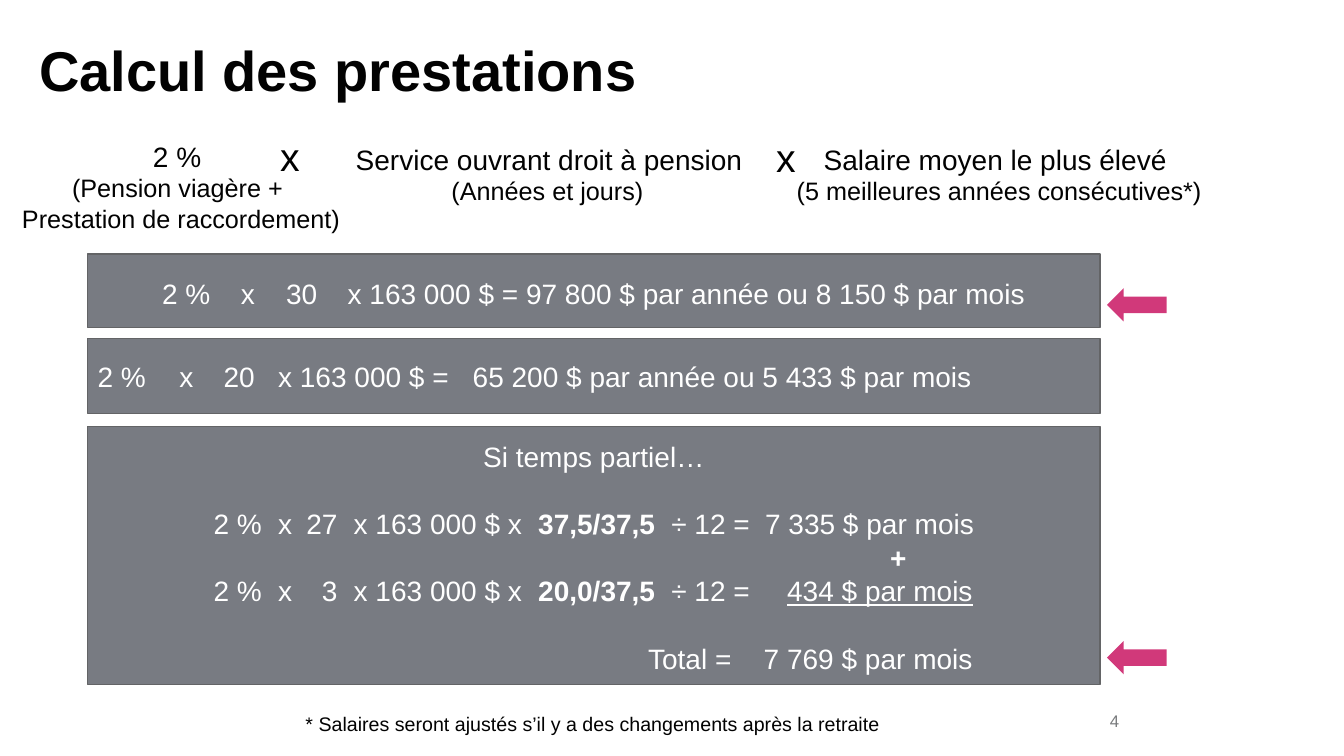
"""Build the slide that explains how pension benefits are calculated."""
from dataclasses import dataclass

import pptx
import pptx.dml.color
import pptx.enum.shapes
import pptx.enum.text
import pptx.oxml.ns
import pptx.slide
import pptx.text.text
import pptx.util
from lxml import etree

Inches = pptx.util.Inches
Pt = pptx.util.Pt
Align = pptx.enum.text.PP_ALIGN
Anchor = pptx.enum.text.MSO_ANCHOR
Shape = pptx.enum.shapes.MSO_SHAPE
qn = pptx.oxml.ns.qn


@dataclass(frozen=True)
class Theme:
    """Colours, font and type sizes of the slide."""
    font: str = "Arial"
    ink: str = "020202"
    black: str = "000000"
    white: str = "FFFFFF"
    band: str = "4B4F59"
    band_line: str = "636466"
    band_opacity: int = 75
    arrow: str = "D1397A"
    number: str = "797B7D"
    title_size: int = 40
    operator_size: int = 28
    body_size: int = 20
    detail_size: int = 18
    note_size: int = 14
    number_size: int = 12


THEME = Theme()


@dataclass(frozen=True)
class Box:
    """Left, top, width and height in inches."""
    left: float
    top: float
    width: float
    height: float

    def lengths(self) -> tuple[int, int, int, int]:
        """Return the four lengths for a shape."""
        return Inches(self.left), Inches(self.top), Inches(self.width), Inches(self.height)


@dataclass(frozen=True)
class Piece:
    """A stretch of text with one format."""
    text: str
    bold: bool = False
    underline: bool = False


@dataclass(frozen=True)
class Line:
    """One paragraph, with tab stops as (inches, alignment) pairs."""
    pieces: tuple[Piece, ...]
    size: int = THEME.body_size
    align: Align = Align.CENTER
    tabs: tuple[tuple[float, str], ...] = ()
    before: int = 0
    pitch: float | None = None


@dataclass(frozen=True)
class Block:
    """A text box and its paragraphs."""
    box: Box
    lines: tuple[Line, ...]
    color: str = THEME.ink
    margins: bool = True
    anchor: Anchor = Anchor.TOP


def plain(text: str, size: int = THEME.body_size, align: Align = Align.CENTER) -> Line:
    """Return a line in one format."""
    return Line((Piece(text),), size, align)


def left_tabs(*stops: float) -> tuple[tuple[float, str], ...]:
    """Return left-aligned tab stops."""
    return tuple((stop, "l") for stop in stops)


def part_time(*pieces: Piece, tabs: tuple[tuple[float, str], ...] = (),
              before: int = 0, align: Align = Align.LEFT) -> Line:
    """Return a line of the part-time example."""
    return Line(pieces, align=align, tabs=tabs, before=before, pitch=24)


def write_line(paragraph: pptx.text.text._Paragraph, line: Line, color: str) -> None:
    """Write one line into a paragraph."""
    if line.tabs:
        tab_list = etree.SubElement(paragraph._p.get_or_add_pPr(), qn("a:tabLst"))
        for stop, kind in line.tabs:
            etree.SubElement(tab_list, qn("a:tab"), pos=str(Inches(stop)), algn=kind)
    paragraph.alignment = line.align
    if line.before:
        paragraph.space_before = Pt(line.before)
    if line.pitch:
        paragraph.line_spacing = Pt(line.pitch)
    for piece in line.pieces:
        run = paragraph.add_run()
        run.text = piece.text
        run.font.name = THEME.font
        run.font.size = Pt(line.size)
        run.font.bold = piece.bold
        run.font.underline = piece.underline
        run.font.color.rgb = pptx.dml.color.RGBColor.from_string(color)


def draw_block(slide: pptx.slide.Slide, block: Block) -> None:
    """Draw a text box."""
    frame = slide.shapes.add_textbox(*block.box.lengths()).text_frame
    frame.word_wrap = True
    frame.vertical_anchor = block.anchor
    if not block.margins:
        frame.margin_left = frame.margin_right = frame.margin_top = frame.margin_bottom = 0
    for index, line in enumerate(block.lines):
        paragraph = frame.add_paragraph() if index else frame.paragraphs[0]
        write_line(paragraph, line, block.color)


def draw_band(slide: pptx.slide.Slide, box: Box) -> None:
    """Draw a translucent grey band."""
    band = slide.shapes.add_shape(Shape.RECTANGLE, *box.lengths())
    band.shadow.inherit = False
    band.fill.solid()
    band.fill.fore_color.rgb = pptx.dml.color.RGBColor.from_string(THEME.band)
    color = band.fill._xPr.find(qn("a:solidFill"))[0]
    etree.SubElement(color, qn("a:alpha"), val=str(THEME.band_opacity * 1000))
    band.line.color.rgb = pptx.dml.color.RGBColor.from_string(THEME.band_line)
    band.line.width = Pt(1)


def draw_arrow(slide: pptx.slide.Slide, box: Box) -> None:
    """Draw an arrow that points at a result."""
    arrow = slide.shapes.add_shape(Shape.LEFT_ARROW, *box.lengths())
    arrow.shadow.inherit = False
    arrow.fill.solid()
    arrow.fill.fore_color.rgb = pptx.dml.color.RGBColor.from_string(THEME.arrow)
    arrow.line.fill.background()


BAND_LEFT, BAND_WIDTH = 0.87, 10.04
BANDS = [Box(BAND_LEFT, top, BAND_WIDTH, height)
         for top, height in ((2.52, 0.73), (3.36, 0.74), (4.23, 2.56))]
ARROWS = [Box(10.98, top, 0.59, 0.33) for top in (2.86, 6.36)]

FACTOR_TABS = ((1.15, "l"), (1.79, "l"), (2.38, "r"), (2.54, "l"),
               (4.37, "l"), (5.69, "l"), (6.62, "l"), (8.68, "r"))

PART_TIME = (
    part_time(Piece("Si temps partiel…"), align=Align.CENTER),
    part_time(Piece("\t2 %\tx\t27\tx 163 000 $ x\t"), Piece("37,5/37,5", bold=True),
              Piece("\t÷ 12 =\t7 335 $ par mois"), tabs=FACTOR_TABS, before=24),
    part_time(Piece("\t+", bold=True), tabs=((7.94, "ctr"),)),
    part_time(Piece("\t2 %\tx\t3\tx 163 000 $ x\t"), Piece("20,0/37,5", bold=True),
              Piece("\t÷ 12 =\t"), Piece("\t434 $ par mois", underline=True), tabs=FACTOR_TABS),
    part_time(Piece("\tTotal =\t7 769 $ par mois"), tabs=((5.46, "l"), (8.68, "r")), before=24),
)

BLOCKS = [
    Block(Box(0.39, 0.35, 10.5, 0.9),
          (Line((Piece("Calcul des prestations", bold=True),), THEME.title_size, Align.LEFT),),
          margins=False),
    Block(Box(0, 1.33, 3.59, 1.38),
          (plain("2 % "), plain("(Pension viagère + ", THEME.detail_size),
           plain("Prestation de raccordement)", THEME.detail_size))),
    Block(Box(3.43, 1.36, 4.07, 0.74),
          (plain("Service ouvrant droit à pension", align=Align.LEFT),
           plain("(Années et jours) ", THEME.detail_size))),
    Block(Box(7.74, 1.36, 4.34, 1.04),
          (plain("Salaire moyen le plus élevé "),
           plain("(5 meilleures années consécutives*)", THEME.detail_size))),
    *(Block(Box(left, top, 0.34, 0.57), (plain("x", THEME.operator_size),), THEME.black)
      for left, top in ((2.68, 1.26), (7.6, 1.27))),
    Block(Box(BAND_LEFT, 7.01, 10.02, 0.34),
          (plain("* Salaires seront ajustés s’il y a des changements après la retraite",
                 THEME.note_size),)),
    Block(Box(BAND_LEFT, 2.69, BAND_WIDTH, 0.44),
          (Line((Piece("\t2 %\tx\t30\tx 163 000 $ = 97 800 $ par année ou 8 150 $ par mois"),),
                align=Align.LEFT, tabs=left_tabs(0.64, 1.42, 1.87, 2.48)),), THEME.white),
    Block(Box(BAND_LEFT, 3.52, BAND_WIDTH, 0.44),
          (Line((Piece("2 %\tx\t20\tx 163 000 $ =\t65 200 $ par année ou 5 433 $ par mois"),),
                align=Align.LEFT, tabs=left_tabs(0.81, 1.25, 1.79, 3.72)),), THEME.white),
    Block(Box(BAND_LEFT, 4.31, BAND_WIDTH, 2.5), PART_TIME, THEME.white),
    Block(Box(9.63, 6.95, 1.57, 0.4), (plain("4", THEME.number_size, Align.RIGHT),),
          THEME.number, anchor=Anchor.MIDDLE),
]


def main() -> None:
    """Build and save the slide."""
    deck = pptx.Presentation()
    deck.slide_width, deck.slide_height = Inches(13.33), Inches(7.5)
    slide = deck.slides.add_slide(deck.slide_layouts[6])
    for band in BANDS:
        draw_band(slide, band)
    for block in BLOCKS:
        draw_block(slide, block)
    for arrow in ARROWS:
        draw_arrow(slide, arrow)
    deck.save("out.pptx")


if __name__ == "__main__":
    main()
